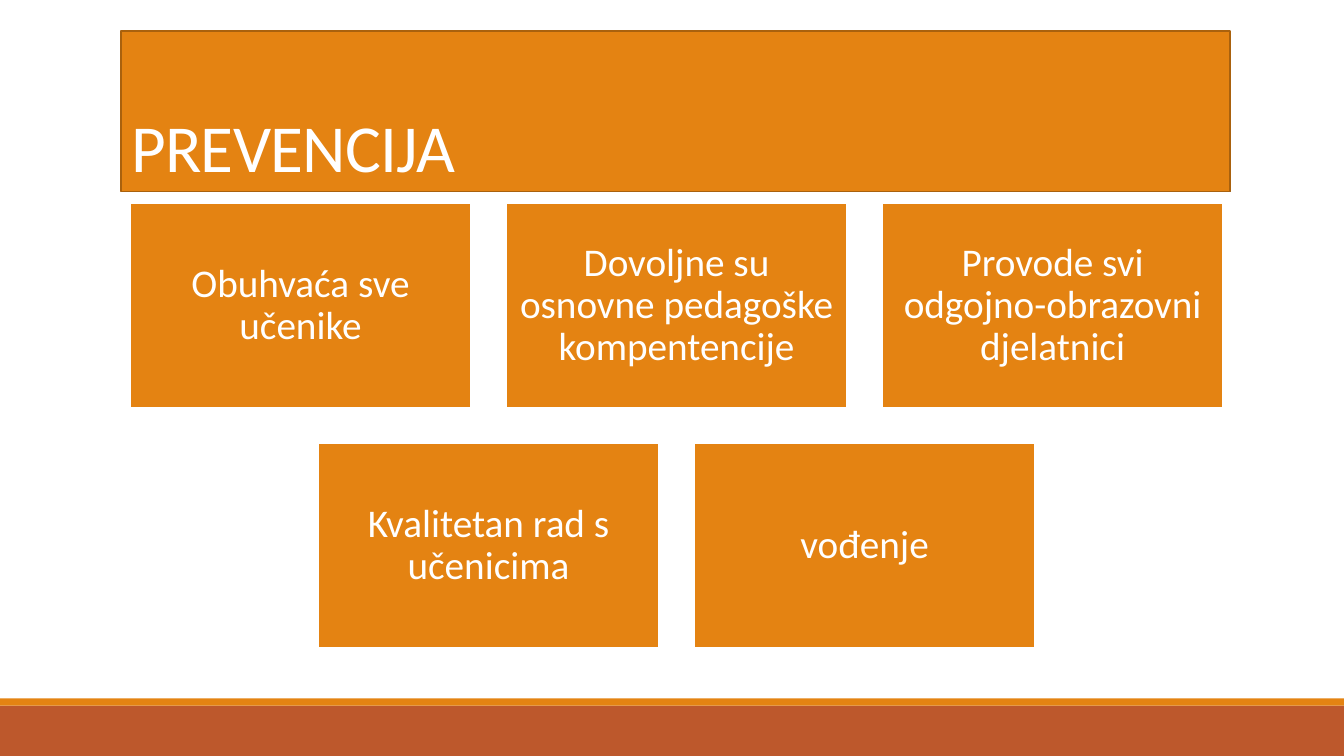
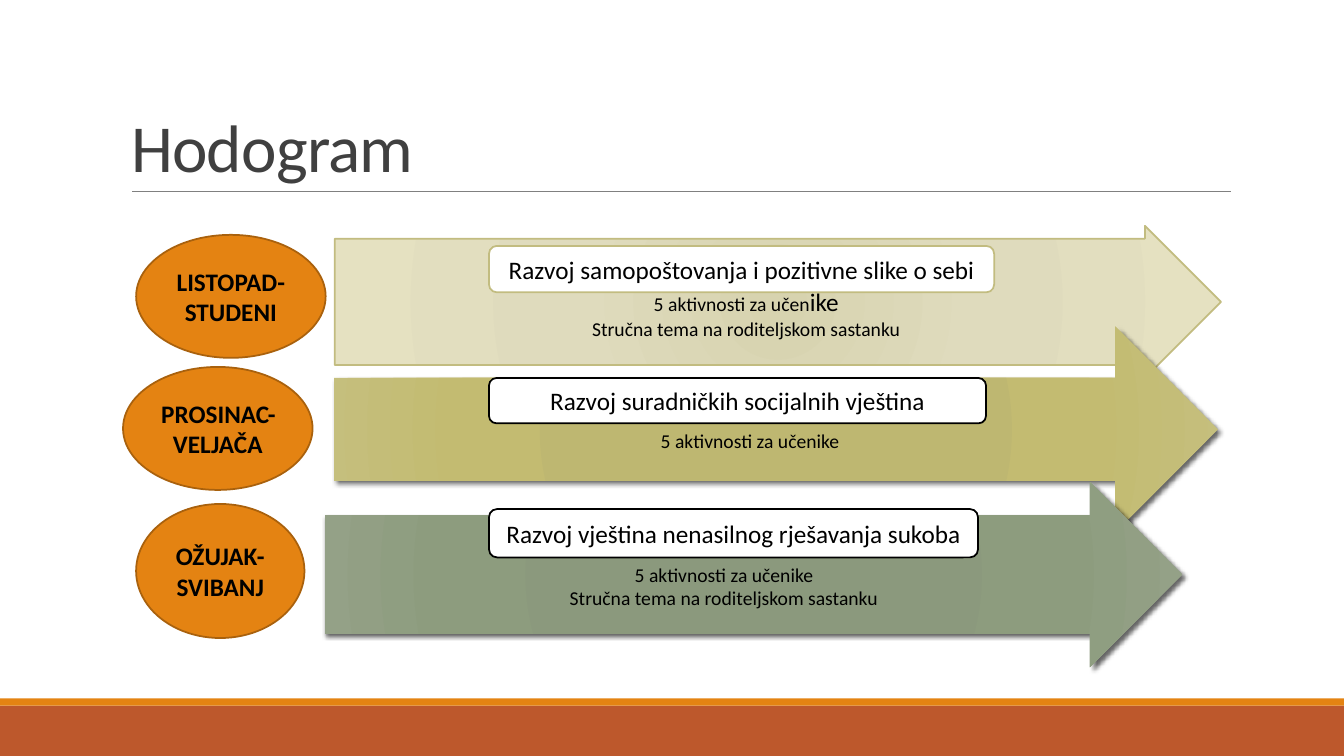
"""Build two slides on prevention: its principles and its yearly schedule."""
from dataclasses import dataclass

from lxml.etree import SubElement
from pptx import Presentation
from pptx.dml.color import RGBColor
from pptx.enum.shapes import MSO_CONNECTOR, MSO_SHAPE as Shape
from pptx.enum.text import MSO_ANCHOR as Anchor, MSO_AUTO_SIZE, PP_ALIGN as Align
from pptx.oxml.ns import qn
from pptx.util import Inches, Pt


@dataclass(frozen=True)
class Theme:
    font: str = "Calibri"
    orange: str = "E48312"
    rust: str = "BD582C"
    brown: str = "A9610D"
    sand: str = "C2BC80"
    rule: str = "808080"
    heading: str = "404040"
    black: str = "000000"
    white: str = "FFFFFF"
    title_size: int = 48
    card_size: int = 28
    label_size: int = 18
    detail_size: int = 14
    outline: float = 1.25


THEME = Theme()
WIDTH, HEIGHT = 13.33, 7.5
TITLE_BOX = (1.2, 0.31, 11, 1.59)
BANDS = [((0, 7, WIDTH, 0.5), THEME.rust), ((0, 6.93, WIDTH, 0.07), THEME.orange)]
TITLE_RULE = (1.31, 1.9, 12.21, 1.9)

PRINCIPLES_TITLE = "PREVENCIJA"
PRINCIPLES = [
    ["Obuhvaća sve učenike",
     "Dovoljne su osnovne pedagoške kompentencije",
     "Provode svi odgojno-obrazovni djelatnici"],
    ["Kvalitetan rad s učenicima", "vođenje"],
]
CARD_LEFT, CARD_TOP = 1.29, 2.02
CARD_WIDTH, CARD_HEIGHT = 3.38, 2.03
CARD_GAP = 0.35

SCHEDULE_TITLE = "Hodogram"
PARENT_TALK = "Stručna tema na roditeljskom sastanku"
PHASES = [
    {
        "months": "LISTOPAD-STUDENI", "months_box": (1.35, 2.33, 1.88, 1.22),
        "goal": "Razvoj samopoštovanja i pozitivne slike o sebi",
        "goal_box": (4.85, 2.44, 5.01, 0.46), "goal_line": THEME.sand,
        "details": [[("5 aktivnosti za učen", THEME.detail_size), ("ike", THEME.label_size)],
                    PARENT_TALK],
        "arrow_box": (3.32, 2.24, 8.79, 1.51), "shaft": 0.83,
        "stops": [(0, "D7D3AF"), (45, "DFDBBD"), (100, "E5E1C1")],
        "arrow_line": THEME.sand, "shadow_blur": None,
    },
    {
        "months": "PROSINAC-VELJAČA", "months_box": (1.22, 3.64, 1.88, 1.22),
        "goal": "Razvoj suradničkih socijalnih vještina",
        "goal_box": (4.85, 3.75, 4.93, 0.45), "goal_line": THEME.black,
        "details": ["5 aktivnosti za učenike"],
        "arrow_box": (3.31, 3.24, 8.77, 2.04), "shaft": 0.5,
        "stops": [(0, "BEB76E"), (34, "BEB771"), (70, "C3BB71"), (100, "C5BF7D")],
        "arrow_line": None, "shadow_blur": 3,
    },
    {
        "months": "OŽUJAK-SVIBANJ", "months_box": (1.35, 5, 1.67, 1.33),
        "goal": "Razvoj vještina nenasilnog rješavanja sukoba",
        "goal_box": (4.85, 5.05, 4.85, 0.48), "goal_line": THEME.black,
        "details": ["5 aktivnosti za učenike", PARENT_TALK],
        "arrow_box": (3.22, 4.78, 8.51, 1.84), "shaft": 0.64,
        "stops": [(0, "8A987B"), (34, "8B997D"), (70, "8D9C7E"), (100, "94A187")],
        "arrow_line": None, "shadow_blur": 3.5,
    },
]
DETAIL_INSETS = (0.1, 0.28, 0.1, 0.05)


def rgb(color):
    return RGBColor.from_string(color)


def inches(box):
    return [Inches(length) for length in box]


def write_text(shape, lines, *, size, color, bold=False, align=Align.CENTER,
               anchor=Anchor.MIDDLE, spacing=1.0, tracking=None,
               insets=(0.1, 0.05, 0.1, 0.05)):
    frame = shape.text_frame
    frame.word_wrap = True
    frame.auto_size = MSO_AUTO_SIZE.NONE
    frame.vertical_anchor = anchor
    (frame.margin_left, frame.margin_top,
     frame.margin_right, frame.margin_bottom) = inches(insets)
    for index, line in enumerate(lines):
        paragraph = frame.add_paragraph() if index else frame.paragraphs[0]
        paragraph.alignment = align
        paragraph.line_spacing = spacing
        for text, run_size in [(line, size)] if isinstance(line, str) else line:
            run = paragraph.add_run()
            run.text = text
            run.font.name = THEME.font
            run.font.size = Pt(run_size)
            run.font.bold = bold
            run.font.color.rgb = rgb(color)
            if tracking is not None:
                run.font._element.set("spc", str(int(tracking * 100)))


def paint(shape, fill, line=None):
    shape.fill.solid()
    shape.fill.fore_color.rgb = rgb(fill)
    if line:
        shape.line.color.rgb = rgb(line)
        shape.line.width = Pt(THEME.outline)
    else:
        shape.line.fill.background()


def add_block(slide, kind, box, fill, line=None):
    block = slide.shapes.add_shape(kind, *inches(box))
    block.shadow.inherit = False
    paint(block, fill, line)
    return block


def add_radial_fill(shape, stops):
    shape.fill.gradient()
    gradient = shape.element.spPr.find(qn("a:gradFill"))
    for child in list(gradient):
        gradient.remove(child)
    stop_list = SubElement(gradient, qn("a:gsLst"))
    for position, color in stops:
        stop = SubElement(stop_list, qn("a:gs"), pos=str(position * 1000))
        SubElement(stop, qn("a:srgbClr"), val=color)
    circle = SubElement(gradient, qn("a:path"), path="circle")
    SubElement(circle, qn("a:fillToRect"), dict.fromkeys("ltrb", "100000"))


def add_shadow(shape, blur):
    effects = shape.element.spPr.find(qn("a:effectLst"))
    shadow = SubElement(effects, qn("a:outerShdw"), blurRad=str(Pt(blur)),
                        dist=str(Pt(2)), dir=str(45 * 60000), rotWithShape="0")
    color = SubElement(shadow, qn("a:srgbClr"), val=THEME.black)
    SubElement(color, qn("a:alpha"), val="60000")


def dress_layout(layout, slide):
    title = layout.placeholders[0]
    title.left, title.top, title.width, title.height = inches(TITLE_BOX)
    decor = [add_block(slide, Shape.RECTANGLE, box, fill) for box, fill in BANDS]
    rule = slide.shapes.add_connector(MSO_CONNECTOR.STRAIGHT, *inches(TITLE_RULE))
    rule.line.color.rgb = rgb(THEME.rule)
    rule.line.width = Pt(0.5)
    SubElement(rule.element.spPr, qn("a:effectLst"))
    for part in decor + [rule]:
        layout.shapes.element.append(part.element)


def write_title(slide, text, color):
    write_text(slide.shapes.title, [text], size=THEME.title_size, color=color,
               align=Align.LEFT, anchor=Anchor.BOTTOM, spacing=0.85, tracking=-0.5)


def build_principles(slide):
    write_title(slide, PRINCIPLES_TITLE, THEME.white)
    paint(slide.shapes.title, THEME.orange, THEME.brown)
    step_x, step_y = CARD_WIDTH + CARD_GAP, CARD_HEIGHT + CARD_GAP
    columns = max(len(row) for row in PRINCIPLES)
    for row_index, row in enumerate(PRINCIPLES):
        row_left = CARD_LEFT + step_x * (columns - len(row)) / 2
        for column, principle in enumerate(row):
            box = (row_left + column * step_x, CARD_TOP + row_index * step_y,
                   CARD_WIDTH, CARD_HEIGHT)
            card = add_block(slide, Shape.RECTANGLE, box, THEME.orange, THEME.white)
            write_text(card, [principle], size=THEME.card_size, color=THEME.white,
                       spacing=0.9, insets=(0.12,) * 4)


def build_schedule(slide):
    write_title(slide, SCHEDULE_TITLE, THEME.heading)
    for phase in PHASES:
        months = add_block(slide, Shape.OVAL, phase["months_box"],
                           THEME.orange, THEME.brown)
        write_text(months, [phase["months"]], size=THEME.label_size,
                   color=THEME.black, bold=True)

        arrow = add_block(slide, Shape.RIGHT_ARROW, phase["arrow_box"],
                          THEME.white, phase["arrow_line"])
        arrow.adjustments[0] = phase["shaft"]
        add_radial_fill(arrow, phase["stops"])
        if phase["shadow_blur"]:
            add_shadow(arrow, phase["shadow_blur"])
        write_text(arrow, phase["details"], size=THEME.detail_size,
                   color=THEME.black, insets=DETAIL_INSETS)

        goal = add_block(slide, Shape.ROUNDED_RECTANGLE, phase["goal_box"],
                         THEME.white, phase["goal_line"])
        write_text(goal, [phase["goal"]], size=THEME.label_size, color=THEME.black)


def main():
    deck = Presentation()
    deck.slide_width, deck.slide_height = Inches(WIDTH), Inches(HEIGHT)
    layout = deck.slide_layouts[5]
    principles, schedule = [deck.slides.add_slide(layout) for _ in range(2)]
    dress_layout(layout, principles)
    build_principles(principles)
    build_schedule(schedule)
    deck.save("out.pptx")


if __name__ == "__main__":
    main()
